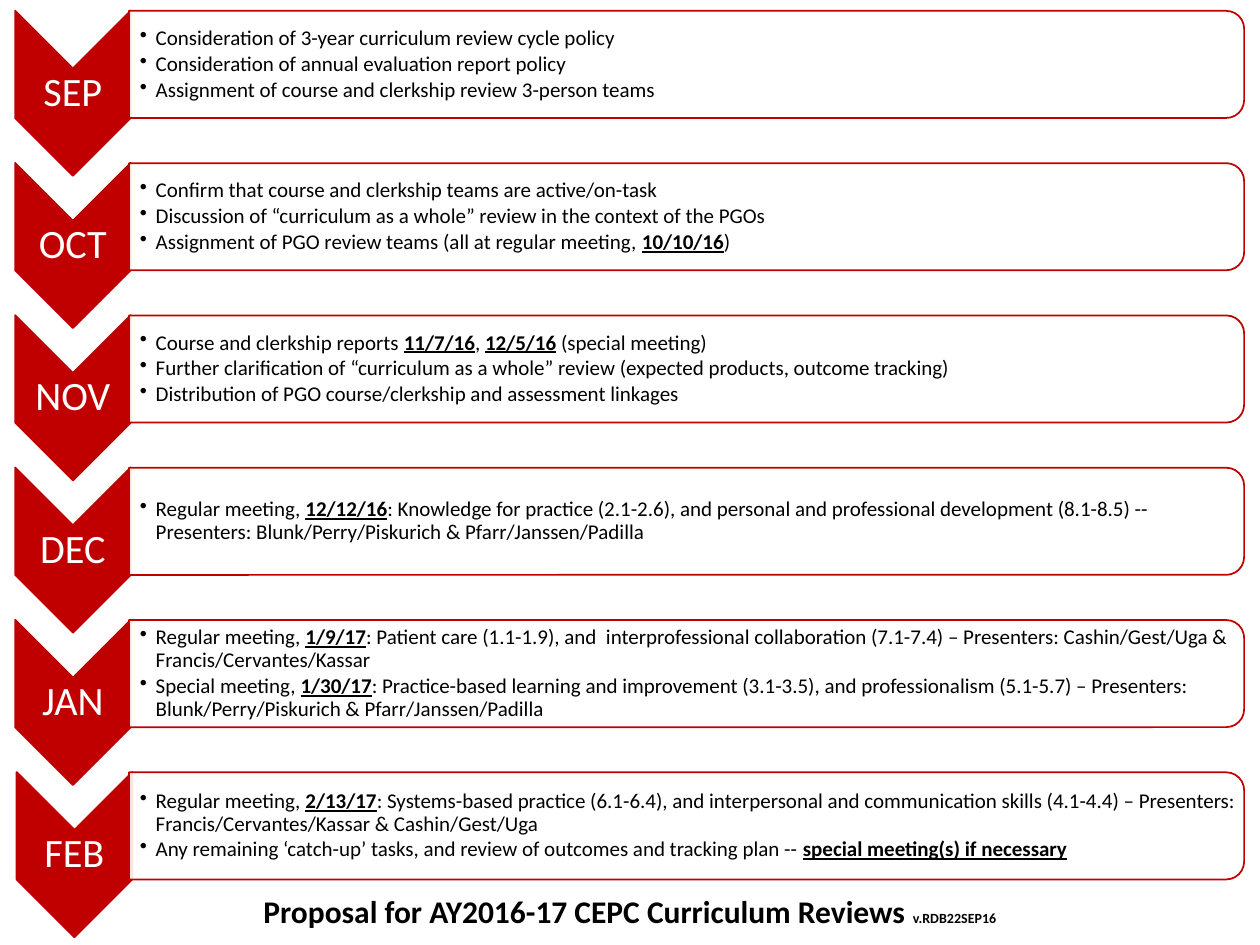
from dataclasses import dataclass

from lxml.etree import SubElement
from pptx import Presentation
from pptx.dml.color import RGBColor
from pptx.enum.shapes import MSO_SHAPE
from pptx.enum.text import MSO_ANCHOR, MSO_AUTO_SIZE, PP_ALIGN
from pptx.oxml.ns import qn
from pptx.util import Cm, Pt

COLORS = {"red": "C00000", "white": "FFFFFF", "black": "000000"}
FONT = "Calibri"
ROW_PITCH = 3.07
CHEVRON_X, CHEVRON_Y = 1.47, 1.88
PANEL_X, PANEL_Y = 13.84, 1.3
HANGING = Cm(0.32)


@dataclass(frozen=True)
class Month:
    label: str
    tasks: tuple[str, ...]
    shift: float = 0


MONTHS = (
    Month("SEP", (
        "Consideration of 3-year curriculum review cycle policy",
        "Consideration of annual evaluation report policy",
        "Assignment of course and clerkship review 3-person teams",
    )),
    Month("OCT", (
        "Confirm that course and clerkship teams are active/on-task",
        "Discussion of “curriculum as a whole” review in the context of the PGOs",
        "Assignment of PGO review teams (all at regular meeting, *10/10/16*)",
    )),
    Month("NOV", (
        "Course and clerkship reports *11/7/16*, *12/5/16* (special meeting)",
        "Further clarification of “curriculum as a whole” review (expected products, outcome tracking)",
        "Distribution of PGO course/clerkship and assessment linkages",
    )),
    Month("DEC", (
        "Regular meeting, *12/12/16*: Knowledge for practice (2.1-2.6), and personal and professional "
        "development (8.1-8.5) -- Presenters: Blunk/Perry/Piskurich & Pfarr/Janssen/Padilla",
    )),
    Month("JAN", (
        "Regular meeting, *1/9/17*: Patient care (1.1-1.9), and  interprofessional collaboration "
        "(7.1-7.4) – Presenters: Cashin/Gest/Uga & Francis/Cervantes/Kassar",
        "Special meeting, *1/30/17*: Practice-based learning and improvement (3.1-3.5), and "
        "professionalism (5.1-5.7) – Presenters: Blunk/Perry/Piskurich & Pfarr/Janssen/Padilla",
    )),
    Month("FEB", (
        "Regular meeting, *2/13/17*: Systems-based practice (6.1-6.4), and interpersonal and "
        "communication skills (4.1-4.4) – Presenters: Francis/Cervantes/Kassar & Cashin/Gest/Uga",
        "Any remaining ‘catch-up’ tasks, and review of outcomes and tracking plan -- "
        "*special meeting(s) if necessary*",
    ), shift=0.03),
)


def write_text(paragraph, text: str, *, size: float, color: str = "black", bold: bool = False,
               align=PP_ALIGN.LEFT, line_spacing: float = 1, space_after: float = 0) -> None:
    paragraph.alignment = align
    paragraph.line_spacing = line_spacing
    paragraph.space_before = Pt(0)
    paragraph.space_after = Pt(space_after)
    for index, part in enumerate(text.split("*")):
        if part:
            emphasized = index % 2 == 1
            run = paragraph.add_run()
            run.text = part
            run.font.name = FONT
            run.font.size = Pt(size)
            run.font.bold = bold or emphasized
            run.font.underline = emphasized
            run.font.color.rgb = RGBColor.from_string(COLORS[color])


def add_bullet(paragraph) -> None:
    properties = paragraph._p.get_or_add_pPr()
    properties.set("marL", str(HANGING))
    properties.set("indent", str(-HANGING))
    SubElement(properties, qn("a:buChar"), char="•")


def add_turned_shape(slide, kind, center_x: float, center_y: float,
                     width: float, height: float, fill: str):
    outline = slide.shapes.add_shape(kind, Cm(center_x - width / 2), Cm(center_y - height / 2),
                                     Cm(width), Cm(height))
    outline.rotation = 90
    outline.shadow.inherit = False
    outline.fill.solid()
    outline.fill.fore_color.rgb = RGBColor.from_string(COLORS[fill])
    outline.line.color.rgb = RGBColor.from_string(COLORS["red"])
    outline.line.width = Pt(1)
    return outline


def add_text_frame(slide, center_x: float, center_y: float, width: float, height: float,
                   left_inset: float, inset: float):
    frame = slide.shapes.add_textbox(Cm(center_x - width / 2), Cm(center_y - height / 2),
                                     Cm(width), Cm(height)).text_frame
    frame.word_wrap = True
    frame.vertical_anchor = MSO_ANCHOR.MIDDLE
    frame.margin_left = Cm(left_inset)
    frame.margin_top = frame.margin_right = frame.margin_bottom = Cm(inset)
    return frame


def add_month(slide, month: Month, row: int) -> None:
    chevron_x = CHEVRON_X + month.shift
    chevron_y = CHEVRON_Y + row * ROW_PITCH
    panel_y = PANEL_Y + row * ROW_PITCH

    add_turned_shape(slide, MSO_SHAPE.CHEVRON, chevron_x, chevron_y, 3.33, 2.33, "red")
    label = add_text_frame(slide, chevron_x, chevron_y, 2.33, 1, 0.04, 0.04)
    write_text(label.paragraphs[0], month.label, size=23, color="white",
               align=PP_ALIGN.CENTER, line_spacing=0.9)

    panel = add_turned_shape(slide, MSO_SHAPE.ROUND_2_SAME_RECTANGLE, PANEL_X, panel_y,
                             2.16, 22.48, "white")
    panel_color = panel.fill._xPr.find(qn("a:solidFill"))[0]
    SubElement(panel_color, qn("a:alpha"), val="90000")

    task_list = add_text_frame(slide, PANEL_X - 0.05, panel_y, 22.38, 1.95, 0.22, 0.02)
    for index, task in enumerate(month.tasks):
        paragraph = task_list.add_paragraph() if index else task_list.paragraphs[0]
        write_text(paragraph, task, size=12, line_spacing=0.9, space_after=1.8)
        add_bullet(paragraph)


def add_title(slide) -> None:
    title = slide.shapes.title
    title.left, title.top, title.width, title.height = Cm(5.03), Cm(17.86), Cm(15.34), Cm(1.02)
    frame = title.text_frame
    frame.word_wrap = False
    frame.auto_size = MSO_AUTO_SIZE.NONE
    frame.vertical_anchor = MSO_ANCHOR.TOP
    heading = frame.paragraphs[0]
    write_text(heading, "Proposal for AY2016-17 CEPC Curriculum Reviews ", size=18, bold=True,
               align=PP_ALIGN.CENTER)
    write_text(heading, "v.RDB22SEP16", size=8, bold=True, align=PP_ALIGN.CENTER)


def main() -> None:
    presentation = Presentation()
    presentation.slide_width, presentation.slide_height = Cm(25.4), Cm(19.05)
    slide = presentation.slides.add_slide(presentation.slide_layouts[5])
    for row, month in enumerate(MONTHS):
        add_month(slide, month, row)
    add_title(slide)
    presentation.save("out.pptx")


if __name__ == "__main__":
    main()
